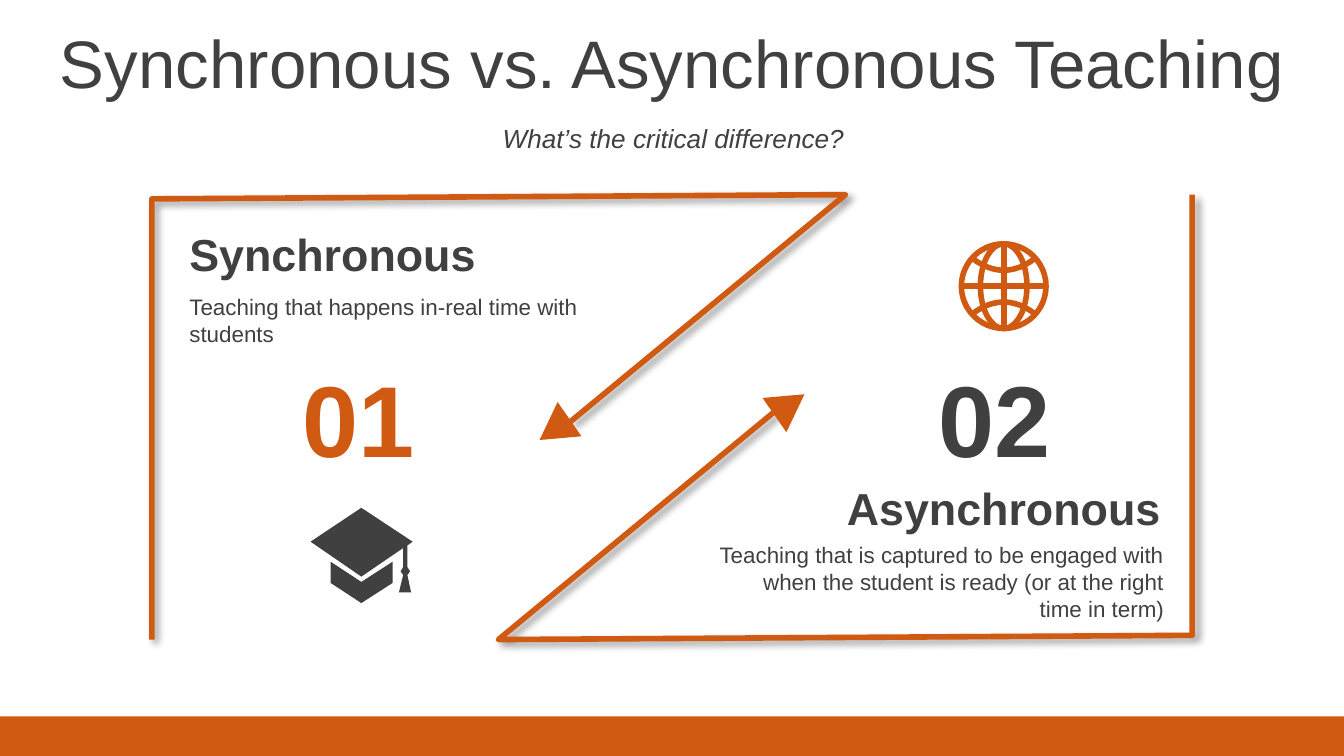
from math import cos, pi, sin

from lxml.etree import SubElement
from pptx import Presentation
from pptx.dml.color import RGBColor
from pptx.enum.shapes import MSO_SHAPE
from pptx.enum.text import MSO_ANCHOR, PP_ALIGN
from pptx.oxml.ns import qn
from pptx.util import Cm, Pt

# Content and style, lengths in cm
WIDTH, HEIGHT = 25.4, 14.29
ORANGE, DARK = "D15A12", "404040"
LEFT, CENTER, RIGHT = PP_ALIGN.LEFT, PP_ALIGN.CENTER, PP_ALIGN.RIGHT
TOP, MIDDLE = MSO_ANCHOR.TOP, MSO_ANCHOR.MIDDLE

TITLE = {"size": Pt(36)}
SUBTITLE = {"size": Pt(14), "italic": True}
NUMBER = {"size": Pt(54), "bold": True}
HEADING = {"size": Pt(24), "bold": True}
BODY = {"size": Pt(12)}

# text, (left, top, width, height), font, colour, alignment, anchor
TEXTS = [
    ("Synchronous vs. Asynchronous Teaching", (0, 0.36, WIDTH, 1.6),
     TITLE, DARK, CENTER, MIDDLE),
    ("What’s the critical difference?", (0.03, 2.21, WIDTH, 0.79),
     SUBTITLE, DARK, CENTER, MIDDLE),
    ("01", (5.23, 6.6, 3.1, 2.57), NUMBER, ORANGE, CENTER, MIDDLE),
    ("02", (17.25, 6.6, 3.1, 2.57), NUMBER, DARK, CENTER, MIDDLE),
    ("Synchronous", (3.33, 4.17, 8.97, 1.27), HEADING, DARK, LEFT, TOP),
    ("Teaching that happens in-real time with students",
     (3.33, 5.41, 8.97, 1.27), BODY, DARK, LEFT, TOP),
    ("Asynchronous", (13.21, 8.97, 8.97, 1.27), HEADING, DARK, RIGHT, TOP),
    ("Teaching that is captured to be engaged with when the student is ready "
     "(or at the right time in term)",
     (13.28, 10.11, 8.97, 1.8), BODY, DARK, RIGHT, TOP),
]

# The second arrow frame is the first one turned by 180 degrees
FRAME = [(2.87, 12.09), (2.87, 3.76), (15.98, 3.68), (10.77, 7.98)]
FRAME_SUM = (WIDTH, 15.77)
HEAD_CENTER, HEAD_SIZE, HEAD_ANGLE = (10.48, 8.12), (0.79, 0.69), 235.2

CAP_BASE = [(6.25, 10.62), (6.83, 11), (7.42, 10.62),
            (7.42, 11.02), (6.83, 11.4), (6.25, 11.02)]
CAP_BOARD = [(6.83, 9.6), (7.8, 10.24), (7.7, 10.31), (7.7, 10.72),
             (7.75, 10.8), (7.7, 10.87), (7.77, 11.2), (7.54, 11.2),
             (7.62, 10.87), (7.57, 10.8), (7.62, 10.72), (7.62, 10.36),
             (6.83, 10.9), (5.87, 10.24)]

GLOBE_CENTER, GLOBE_RADIUS, MERIDIAN = (18.97, 5.41), 0.8, 0.44


def rgb(value):
    return RGBColor.from_string(value)


def paint(s, color):
    s.shadow.inherit = False
    s.fill.solid()
    s.fill.fore_color.rgb = rgb(color)
    s.line.fill.background()


def add_solid(kind, left, top, width, height, color):
    s = shapes.add_shape(kind, Cm(left), Cm(top), Cm(width), Cm(height))
    paint(s, color)
    return s


def add_outline(contours, close=False):
    """One freeform made of several contours."""
    builder = None
    for contour in contours:
        pts = [(Cm(x), Cm(y)) for x, y in contour]
        if builder is None:
            builder = shapes.build_freeform(*pts[0])
        else:
            builder.move_to(*pts[0])
        builder.add_line_segments(pts[1:], close=close)
    s = builder.convert_to_shape()
    s.shadow.inherit = False
    return s


def stroke(s, color):
    s.fill.background()
    s.line.color.rgb = rgb(color)
    s.line.width = Pt(3)
    SubElement(s.line._get_or_add_ln(), qn("a:round"))


def add_shadow(s):
    effects = s._element.spPr.find(qn("a:effectLst"))
    shadow = SubElement(effects, qn("a:outerShdw"), blurRad=str(Pt(4)),
                        dist=str(Pt(3)), dir="2700000", algn="tl",
                        rotWithShape="0")
    color = SubElement(shadow, qn("a:srgbClr"), val="000000")
    SubElement(color, qn("a:alpha"), val="40000")


def add_text(text, box, font, color, align, anchor):
    tf = shapes.add_textbox(*map(Cm, box)).text_frame
    tf.word_wrap = True
    tf.vertical_anchor = anchor
    p = tf.paragraphs[0]
    p.alignment = align
    r = p.add_run()
    r.text = text
    for name, value in {"name": "Arial", **font}.items():
        setattr(r.font, name, value)
    r.font.color.rgb = rgb(color)


def turned(point):
    return tuple(total - v for total, v in zip(FRAME_SUM, point))


def ellipse(rx, ry, steps=48):
    return [(rx * cos(2 * pi * i / steps), ry * sin(2 * pi * i / steps))
            for i in range(steps + 1)]


def parallel(sign, steps=12):
    ts = [2 * i / steps - 1 for i in range(steps + 1)]
    return [(0.6 * t, sign * (0.3 + 0.23 * t * t)) for t in ts]


prs = Presentation()
prs.slide_width, prs.slide_height = Cm(WIDTH), Cm(HEIGHT)
shapes = prs.slides.add_slide(prs.slide_layouts[6]).shapes

# Footer band
add_solid(MSO_SHAPE.RECTANGLE, 0, 13.54, WIDTH, HEIGHT - 13.54, ORANGE)

# Arrow frames with their heads
for points, (x, y), angle in [
    (FRAME, HEAD_CENTER, HEAD_ANGLE),
    ([turned(pt) for pt in FRAME], turned(HEAD_CENTER), HEAD_ANGLE - 180),
]:
    s = add_outline([points])
    stroke(s, ORANGE)
    add_shadow(s)
    w, h = HEAD_SIZE
    head = add_solid(MSO_SHAPE.ISOSCELES_TRIANGLE, x - w / 2, y - h / 2, w, h, ORANGE)
    head.rotation = angle

# Texts
for item in TEXTS:
    add_text(*item)

# Globe: rim, meridians, equator and two parallels
R = GLOBE_RADIUS
globe = [ellipse(R, R), ellipse(MERIDIAN, R), [(0, -R), (0, R)],
         [(-R, 0), (R, 0)], parallel(-1), parallel(1)]
cx, cy = GLOBE_CENTER
stroke(add_outline([[(cx + x, cy + y) for x, y in line] for line in globe]), ORANGE)

# Graduation cap
paint(add_outline([CAP_BASE, CAP_BOARD], close=True), DARK)

prs.save("out.pptx")
